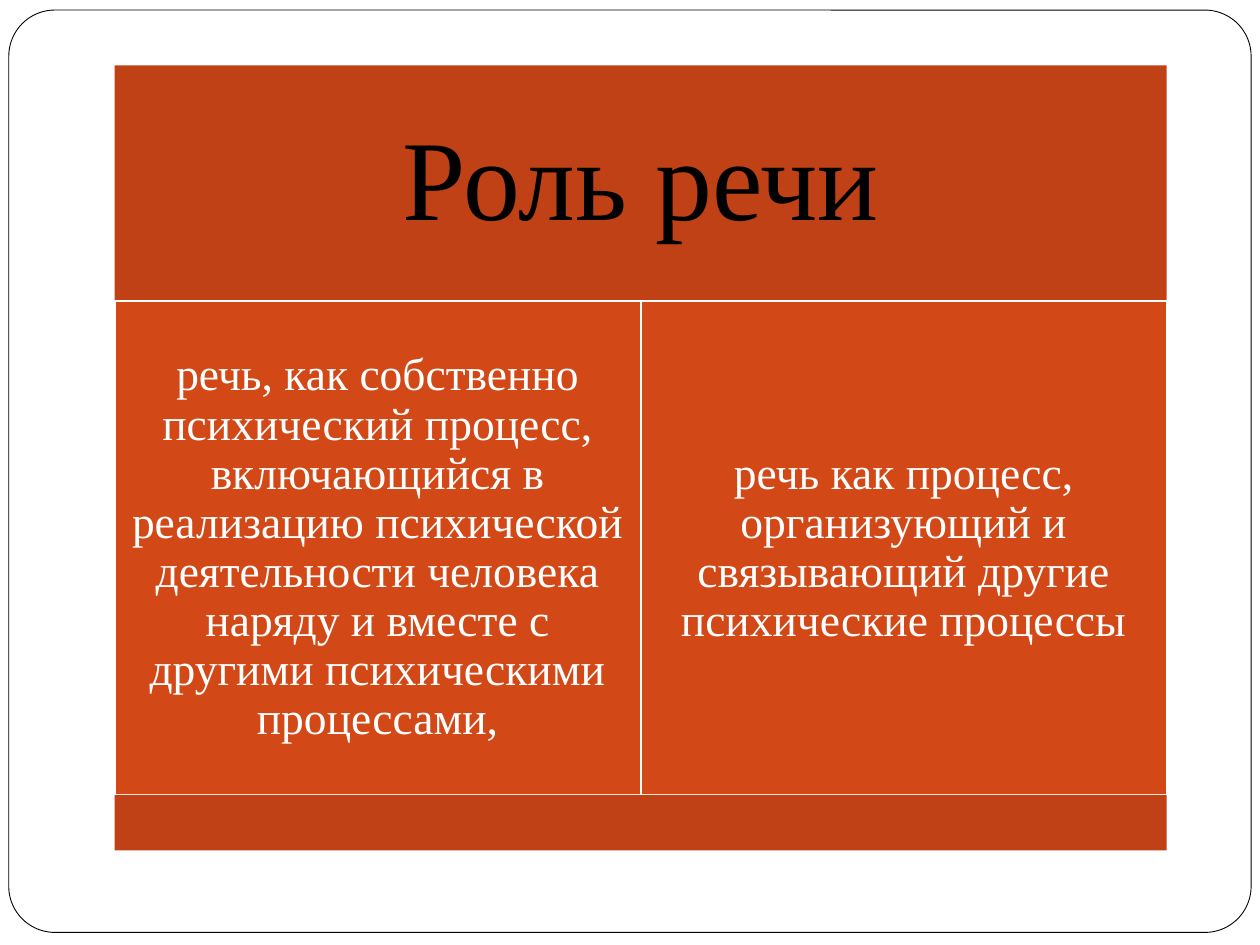
import dataclasses

import pptx
import pptx.dml.color
import pptx.enum.shapes
import pptx.enum.text
import pptx.util

Inches = pptx.util.Inches
Pt = pptx.util.Pt
Shape = pptx.enum.shapes.MSO_SHAPE


@dataclasses.dataclass(frozen=True)
class Theme:
    """Hold the colours, font and type sizes."""
    font: str = "Times New Roman"
    white: str = "FFFFFF"
    black: str = "000000"
    band: str = "BF4115"
    cell: str = "D34817"
    title: int = 65
    body: int = 26


THEME = Theme()
LEFT, TOP, WIDTH = 0.91, 0.52, 8.35
HEAD, BODY, FOOT = 1.87, 3.92, 0.44
ROLES = (
    "речь, как собственно психический процесс, включающийся в реализацию "
    "психической деятельности человека наряду и вместе с другими "
    "психическими процессами,",
    "речь как процесс, организующий и связывающий другие психические процессы",
)


def rgb(code):
    """Turn a hex code into a colour."""
    return pptx.dml.color.RGBColor.from_string(code)


def apply(item, values):
    """Set each attribute named in a dict."""
    for name, value in values.items():
        setattr(item, name, value)


def add_box(slide, box, fill, line=None, width=1, kind=Shape.RECTANGLE):
    """Add a filled shape with an optional outline."""
    shape = slide.shapes.add_shape(kind, *map(Inches, box))
    shape.shadow.inherit = False
    shape.fill.solid()
    shape.fill.fore_color.rgb = rgb(fill)
    if line:
        shape.line.color.rgb = rgb(line)
        shape.line.width = Pt(width)
    else:
        shape.line.fill.background()
    return shape


def add_text(shape, text, size, color, inset):
    """Write centred text inside a shape."""
    frame = shape.text_frame
    sides = ("left", "top", "right", "bottom")
    apply(frame, {f"margin_{side}": Inches(inset) for side in sides})
    apply(frame, {"word_wrap": True,
                  "vertical_anchor": pptx.enum.text.MSO_ANCHOR.MIDDLE})
    para = frame.paragraphs[0]
    apply(para, {"alignment": pptx.enum.text.PP_ALIGN.CENTER,
                 "line_spacing": 0.9})
    run = para.add_run()
    run.text = text
    apply(run.font, {"name": THEME.font, "size": Pt(size)})
    run.font.color.rgb = rgb(color)


def main():
    """Build the slide and save it."""
    deck = pptx.Presentation()
    apply(deck, {"slide_width": Inches(10), "slide_height": Inches(7.5)})
    slide = deck.slides.add_slide(deck.slide_layouts[6])
    frame = add_box(slide, (0.07, 0.08, 9.86, 7.32), THEME.white,
                    THEME.black, 0.5, Shape.ROUNDED_RECTANGLE)
    frame.adjustments[0] = 0.05
    head = add_box(slide, (LEFT, TOP, WIDTH, HEAD), THEME.band)
    add_text(head, "Роль речи", THEME.title, THEME.black, 0.27)
    span = WIDTH / len(ROLES)
    for col, role in enumerate(ROLES):
        box = (LEFT + col * span, TOP + HEAD, span, BODY)
        cell = add_box(slide, box, THEME.cell, THEME.white)
        add_text(cell, role, THEME.body, THEME.white, 0.11)
    add_box(slide, (LEFT, TOP + HEAD + BODY, WIDTH, FOOT), THEME.band)
    deck.save("out.pptx")


if __name__ == "__main__":
    main()
